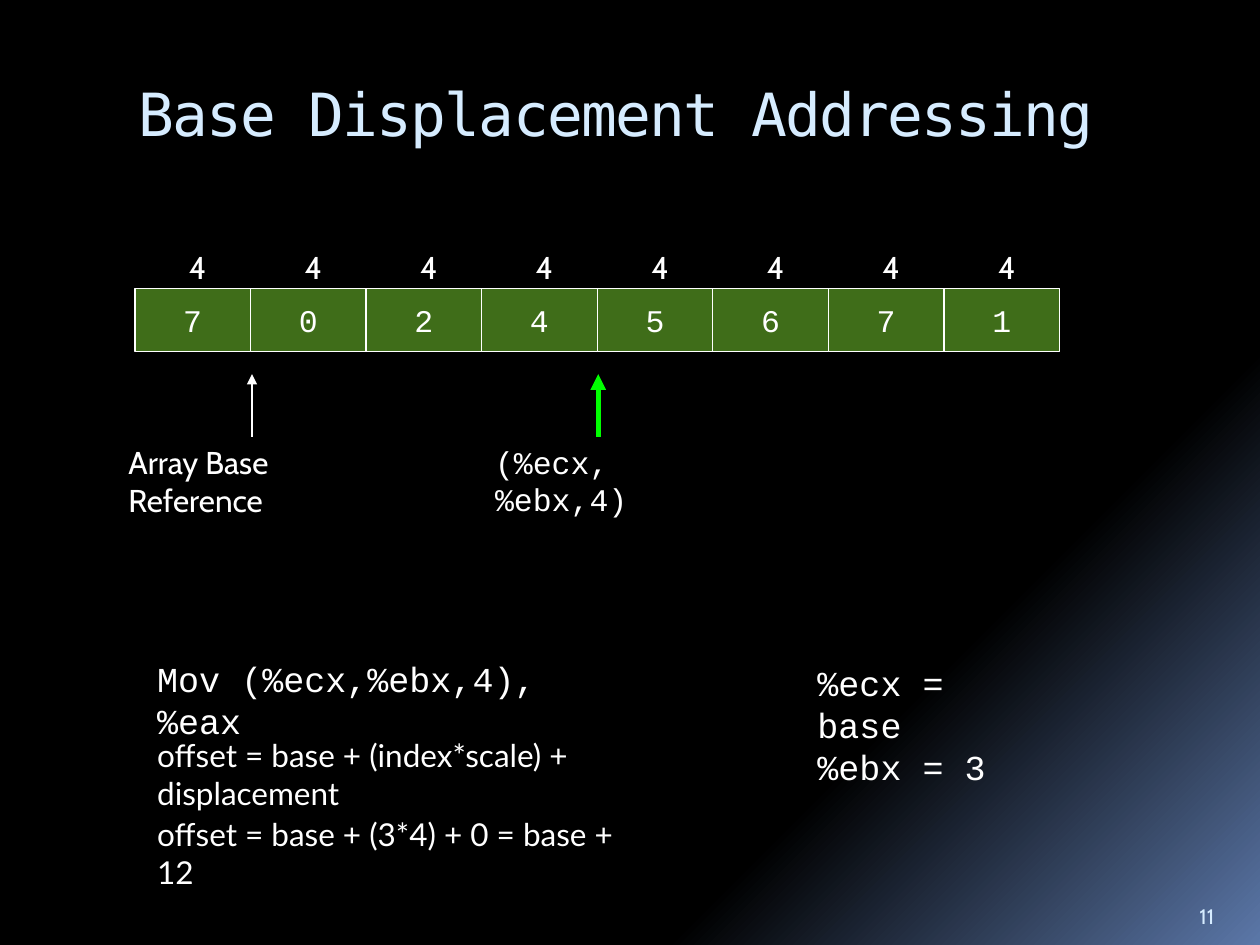
from dataclasses import dataclass

from lxml import etree
from pptx import Presentation
from pptx.dml.color import RGBColor
from pptx.enum import shapes, text
from pptx.oxml import ns
from pptx.util import Cm, Pt


@dataclass(frozen=True)
class Theme:
    black: RGBColor = RGBColor(0x00, 0x00, 0x00)
    glow: RGBColor = RGBColor(0x5B, 0x77, 0xA8)
    heading: RGBColor = RGBColor(0xD6, 0xEC, 0xFF)
    white: RGBColor = RGBColor(0xFF, 0xFF, 0xFF)
    cell: RGBColor = RGBColor(0x3F, 0x6D, 0x19)
    target: RGBColor = RGBColor(0x00, 0xFF, 0x00)
    title_font: str = "DejaVu Sans Mono"
    label_font: str = "Cabin"
    code_font: str = "Courier New"
    formula_font: str = "Lato"
    title_size: int = 34
    code_size: int = 20
    body_size: int = 18
    number_size: int = 12


THEME = Theme()
VALUES = "70245671"
ELEMENT_SIZE = "4"
CELL_LEFT, CELL_TOP, CELL_WIDTH, CELL_HEIGHT = 2.72, 5.82, 2.33, 1.27
SIZE_LABEL_INSET, SIZE_LABEL_TOP = 0.84, 4.88
ARROW_TOP, ARROW_BOTTOM = 7.54, 8.81


def format_runs(text_frame, font, size, color=THEME.white):
    for paragraph in text_frame.paragraphs:
        for run in paragraph.runs:
            run.font.name = font
            run.font.size = Pt(size)
            run.font.color.rgb = color


def set_background(slide):
    fill = slide.background.fill
    fill.gradient()
    fill.gradient_angle = 315
    stops = ((0.73, THEME.black), (1.0, THEME.glow))
    for stop, (position, color) in zip(fill.gradient_stops, stops):
        stop.position = position
        stop.color.rgb = color


def set_title(slide, wording):
    title = slide.shapes.title
    title.left, title.top, title.width, title.height = Cm(2.54), Cm(1.42), Cm(21.59), Cm(2.54)
    frame = title.text_frame
    frame.text = wording
    frame.auto_size = text.MSO_AUTO_SIZE.NONE
    frame.vertical_anchor = text.MSO_ANCHOR.TOP
    paragraph = frame.paragraphs[0]
    paragraph.alignment = text.PP_ALIGN.LEFT
    format_runs(frame, THEME.title_font, THEME.title_size, THEME.heading)
    paragraph.runs[0].font._element.set("spc", "-100")


def add_text(slide, wording, left, top, width, height, font, size=THEME.body_size,
             color=THEME.white, anchor=text.MSO_ANCHOR.TOP):
    box = slide.shapes.add_textbox(Cm(left), Cm(top), Cm(width), Cm(height))
    frame = box.text_frame
    frame.word_wrap = True
    frame.vertical_anchor = anchor
    frame.text = wording
    format_runs(frame, font, size, color)


def add_cell(slide, value, left):
    cell = slide.shapes.add_shape(shapes.MSO_SHAPE.RECTANGLE, Cm(left), Cm(CELL_TOP),
                                  Cm(CELL_WIDTH), Cm(CELL_HEIGHT))
    cell.shadow.inherit = False
    cell.fill.solid()
    cell.fill.fore_color.rgb = THEME.cell
    cell.line.color.rgb = THEME.white
    cell.line.width = Pt(0.75)
    frame = cell.text_frame
    frame.text = value
    frame.vertical_anchor = text.MSO_ANCHOR.MIDDLE
    frame.paragraphs[0].alignment = text.PP_ALIGN.CENTER
    format_runs(frame, THEME.code_font, THEME.body_size)


def add_array(slide):
    """Draw the row of values with each element's size above its cell."""
    for index, value in enumerate(VALUES):
        left = CELL_LEFT + index * CELL_WIDTH
        add_cell(slide, value, left)
        add_text(slide, ELEMENT_SIZE, left + SIZE_LABEL_INSET, SIZE_LABEL_TOP, 0.8, 0.94,
                 THEME.label_font)


def add_pointer(slide, x, color, width):
    """Draw an upward arrow below the array."""
    pointer = slide.shapes.add_connector(shapes.MSO_CONNECTOR.STRAIGHT, Cm(x), Cm(ARROW_TOP),
                                         Cm(x), Cm(ARROW_BOTTOM))
    pointer.line.color.rgb = color
    pointer.line.width = Pt(width)
    line = pointer.line._get_or_add_ln()
    etree.SubElement(line, ns.qn("a:headEnd"), type="triangle")
    etree.SubElement(pointer._element.spPr, ns.qn("a:effectLst"))


def main():
    presentation = Presentation()
    presentation.slide_width, presentation.slide_height = Cm(25.4), Cm(19.05)
    slide = presentation.slides.add_slide(presentation.slide_layouts[5])
    set_background(slide)
    set_title(slide, "Base Displacement Addressing")
    add_array(slide)

    add_pointer(slide, 5.08, THEME.white, 0.75)
    add_text(slide, "Array Base Reference", 2.34, 8.81, 5.51, 0.94, THEME.label_font)
    add_pointer(slide, 12.06, THEME.target, 3)
    add_text(slide, "(%ecx,%ebx,4)", 9.73, 8.8, 4.93, 0.94, THEME.code_font)

    add_text(slide, "Mov (%ecx,%ebx,4), %eax", 2.92, 13.13, 10.1, 1.09,
             THEME.code_font, THEME.code_size)
    add_text(slide, "%ecx = base\n%ebx = 3", 16.23, 13.21, 5.16, 1.96,
             THEME.code_font, THEME.code_size)
    add_text(slide, "offset = base + (index*scale) + displacement", 2.92, 14.71, 11.91, 0.94,
             THEME.formula_font)
    add_text(slide, "offset = base + (3*4) + 0 = base + 12", 2.92, 16.31, 10.2, 0.94,
             THEME.formula_font)
    add_text(slide, "11", 23.93, 17.83, 1.27, 1.02, THEME.label_font, THEME.number_size,
             THEME.heading, text.MSO_ANCHOR.BOTTOM)
    presentation.save("out.pptx")


if __name__ == "__main__":
    main()
